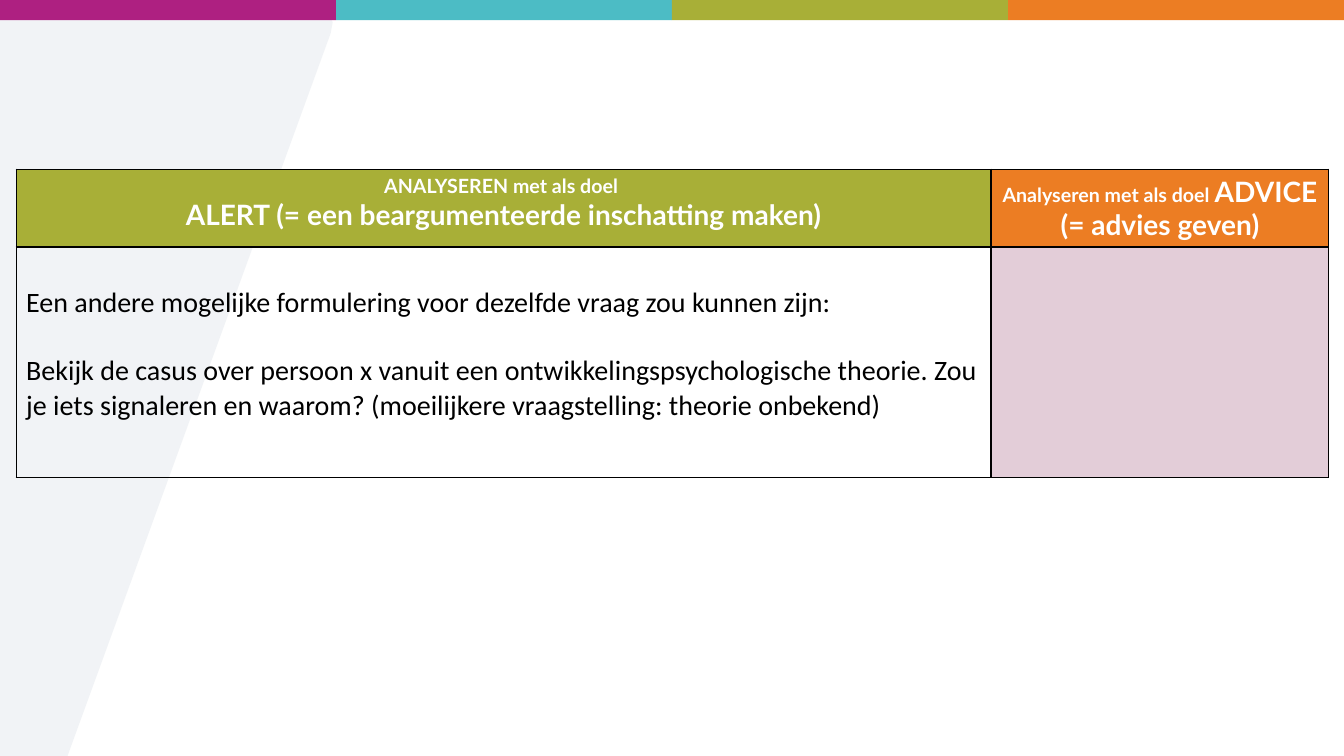
from lxml.etree import SubElement
from pptx import Presentation
from pptx.dml.color import RGBColor
from pptx.enum.shapes import MSO_SHAPE
from pptx.enum.text import PP_ALIGN
from pptx.oxml import parse_xml
from pptx.oxml.ns import nsdecls, qn
from pptx.util import Inches, Pt

PURPLE = RGBColor(0xAE, 0x20, 0x81)
TEAL = RGBColor(0x4C, 0xBC, 0xC5)
GREEN = RGBColor(0xA8, 0xAF, 0x37)
ORANGE = RGBColor(0xEC, 0x7D, 0x23)
PINK = RGBColor(0xE3, 0xCD, 0xD8)
GREY = RGBColor(0xE8, 0xEC, 0xF0)
WHITE = RGBColor(0xFF, 0xFF, 0xFF)
BLACK = RGBColor(0, 0, 0)


def paint(shape, color):
    shape.shadow.inherit = False
    shape.fill.solid()
    shape.fill.fore_color.rgb = color
    shape.line.fill.background()


def write(para, text, size, face, color, bold):
    run = para.add_run()
    run.text = text
    run.font.size = Pt(size)
    run.font.name = face
    run.font.color.rgb = color
    run.font.bold = bold


deck = Presentation()
deck.slide_width = Inches(13.33)
deck.slide_height = Inches(7.5)
slide = deck.slides.add_slide(deck.slide_layouts[6])

edge = [(3.09, 0.05), (3.24, 0.11), (3.3, 0.22), (3.28, 0.33), (0.67, 7.5), (0, 7.5)]
pen = slide.shapes.build_freeform(0, Inches(0.05))
pen.add_line_segments([(Inches(x), Inches(y)) for x, y in edge])
wedge = pen.convert_to_shape()
paint(wedge, GREY)
tint = wedge.fill._xPr.find(qn("a:solidFill"))[0]
SubElement(tint, qn("a:alpha"), val="59000")

step = 13.33 / 4
for i, color in enumerate([PURPLE, TEAL, GREEN, ORANGE]):
    bar = slide.shapes.add_shape(
        MSO_SHAPE.RECTANGLE, Inches(i * step), 0, Inches(step), Inches(0.2))
    paint(bar, color)

frame = slide.shapes.add_table(
    2, 2, Inches(0.16), Inches(1.68), Inches(13.02), Inches(3.06))
table = frame.table
table.columns[0].width = Inches(9.67)
table.columns[1].width = Inches(3.35)
table.rows[0].height = Inches(0.77)
table.rows[1].height = Inches(2.29)

for cell, color in zip(table.iter_cells(), [GREEN, ORANGE, None, PINK]):
    if color is None:
        cell.fill.background()
    else:
        cell.fill.solid()
        cell.fill.fore_color.rgb = color
    props = cell._tc.get_or_add_tcPr()
    for i, side in enumerate(["lnL", "lnR", "lnT", "lnB"]):
        props.insert(i, parse_xml(
            f'<a:{side} {nsdecls("a")} w="12700"><a:solidFill>'
            f'<a:srgbClr val="000000"/></a:solidFill></a:{side}>'))

heads = [
    ("ANALYSEREN met als doel ", "ALERT (= een beargumenteerde inschatting maken)", True),
    ("Analyseren met als doel ", "ADVICE (= advies geven)", False),
]
for col, (lead, goal, split) in enumerate(heads):
    para = table.cell(0, col).text_frame.paragraphs[0]
    para.alignment = PP_ALIGN.CENTER
    write(para, lead, 14, "Lato", WHITE, True)
    if split:
        para.add_line_break()
    write(para, goal, 20, "Lato", WHITE, True)

body = table.cell(1, 0)
body.margin_top = Inches(0.39)
first = body.text_frame.paragraphs[0]
write(first, "Een andere mogelijke formulering voor dezelfde vraag zou kunnen zijn:",
      20, "Calibri", BLACK, False)
task = body.text_frame.add_paragraph()
task.space_before = Pt(24)
write(task, "Bekijk de casus over persoon x vanuit een ontwikkelingspsychologische theorie. "
      "Zou je iets signaleren en waarom? (moeilijkere vraagstelling: theorie onbekend)",
      20, "Calibri", BLACK, False)

deck.save("out.pptx")
